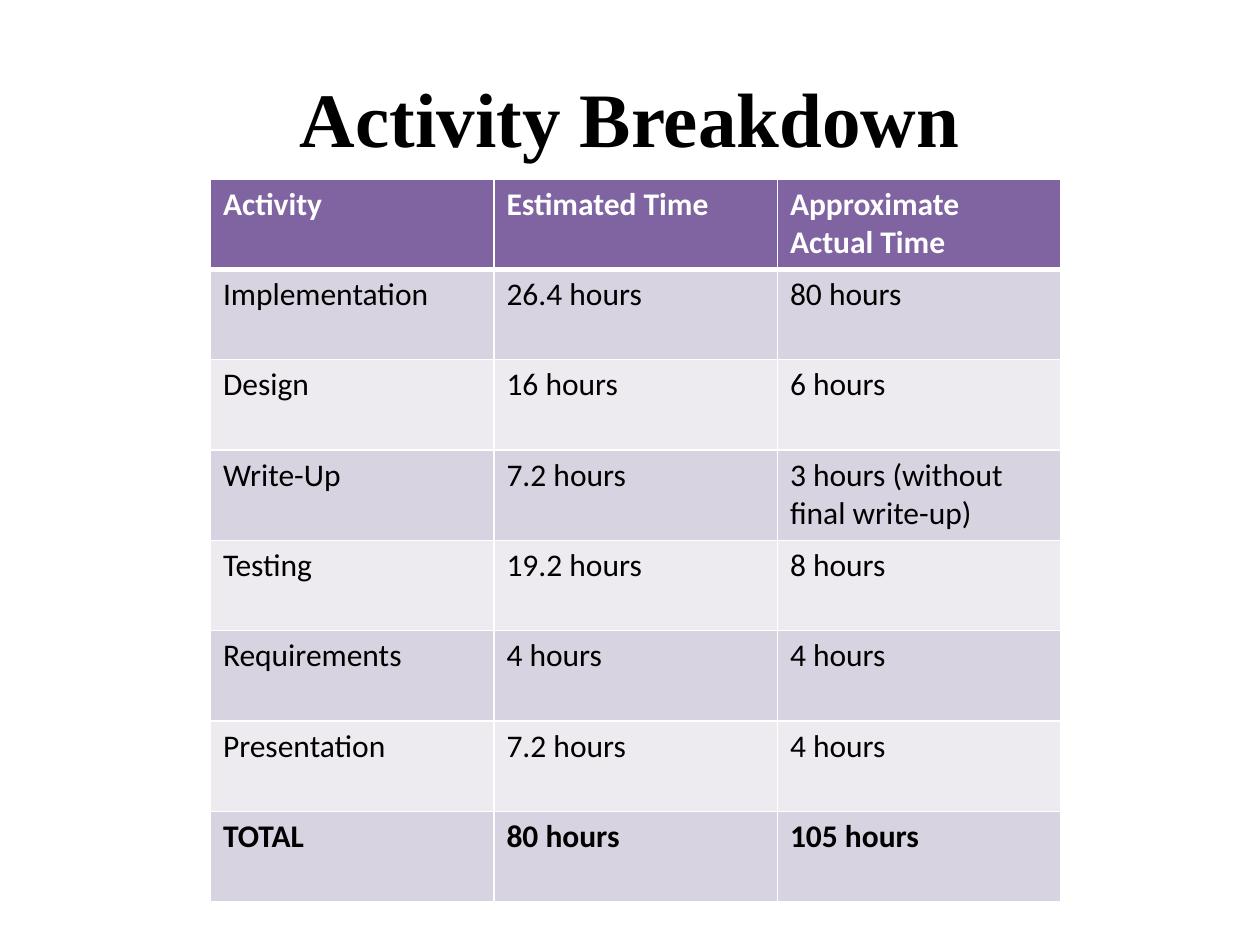
from lxml import etree
from pptx import Presentation
from pptx import util as u
from pptx.dml.color import RGBColor
from pptx.enum import text
from pptx.oxml import ns

WIDTH, HEIGHT = 10, 7.5
COLUMN_WIDTH, ROW_HEIGHT = 2.25, 0.717
HEADER_FILL, BAND_FILLS = "8064A2", ("D8D3E0", "EDEAF0")
WHITE, BLACK = "FFFFFF", "000000"

ACTIVITIES = [
    ("Activity", "Estimated Time", "Approximate Actual Time"),
    ("Implementation", "26.4 hours", "80 hours"),
    ("Design", "16 hours", "6 hours"),
    ("Write-Up", "7.2 hours", "3 hours (without final write-up)"),
    ("Testing", "19.2 hours", "8 hours"),
    ("Requirements", "4 hours", "4 hours"),
    ("Presentation", "7.2 hours", "4 hours"),
    ("TOTAL", "80 hours", "105 hours"),
]


def color(value):
    return RGBColor.from_string(value)


def set_font(paragraph, name, size, value, bold):
    font = paragraph.font
    font.name, font.size, font.bold = name, u.Pt(size), bold
    font.color.rgb = color(value)


def add_title(slide, wording):
    title = slide.shapes.title
    title.left, title.top = u.Inches(0.05 * WIDTH), u.Inches(0.04 * HEIGHT)
    title.width, title.height = u.Inches(0.9 * WIDTH), u.Inches(1.25)
    title.text_frame.text = wording
    title.text_frame.vertical_anchor = text.MSO_ANCHOR.MIDDLE
    paragraph = title.text_frame.paragraphs[0]
    paragraph.alignment = text.PP_ALIGN.CENTER
    set_font(paragraph, "Times New Roman", 44, BLACK, True)


def set_borders(cell, **points):
    """Draw white cell borders; widths are keyed by side: L, R, T, B."""
    properties = cell._tc.get_or_add_tcPr()
    for side, width in points.items():
        line = etree.SubElement(properties, ns.qn(f"a:ln{side}"), w=str(u.Pt(width)))
        fill = etree.SubElement(line, ns.qn("a:solidFill"))
        etree.SubElement(fill, ns.qn("a:srgbClr"), val=WHITE)


def format_cell(cell, wording, row, last_row):
    header = row == 0
    cell.text = wording
    set_font(cell.text_frame.paragraphs[0], "Calibri", 18,
             WHITE if header else BLACK, row in (0, last_row))
    # The rule under the header is heavier than the others
    set_borders(cell, L=1, R=1, T=3 if row == 1 else 1, B=3 if header else 1)
    cell.fill.solid()
    cell.fill.fore_color.rgb = color(HEADER_FILL if header else BAND_FILLS[(row - 1) % 2])


def add_activity_table(slide, left, top, rows):
    column_count = len(rows[0])
    table = slide.shapes.add_table(
        len(rows), column_count, u.Inches(left), u.Inches(top),
        u.Inches(column_count * COLUMN_WIDTH), u.Inches(len(rows) * ROW_HEIGHT)).table
    for row, values in enumerate(rows):
        for column, wording in enumerate(values):
            format_cell(table.cell(row, column), wording, row, len(rows) - 1)


def main():
    presentation = Presentation()
    presentation.slide_width = u.Inches(WIDTH)
    presentation.slide_height = u.Inches(HEIGHT)
    slide = presentation.slides.add_slide(presentation.slide_layouts.get_by_name("Title Only"))

    # Heading, then the hours per activity
    add_title(slide, "Activity Breakdown")
    add_activity_table(slide, 1.67, 1.42, ACTIVITIES)

    presentation.save("out.pptx")


if __name__ == "__main__":
    main()
